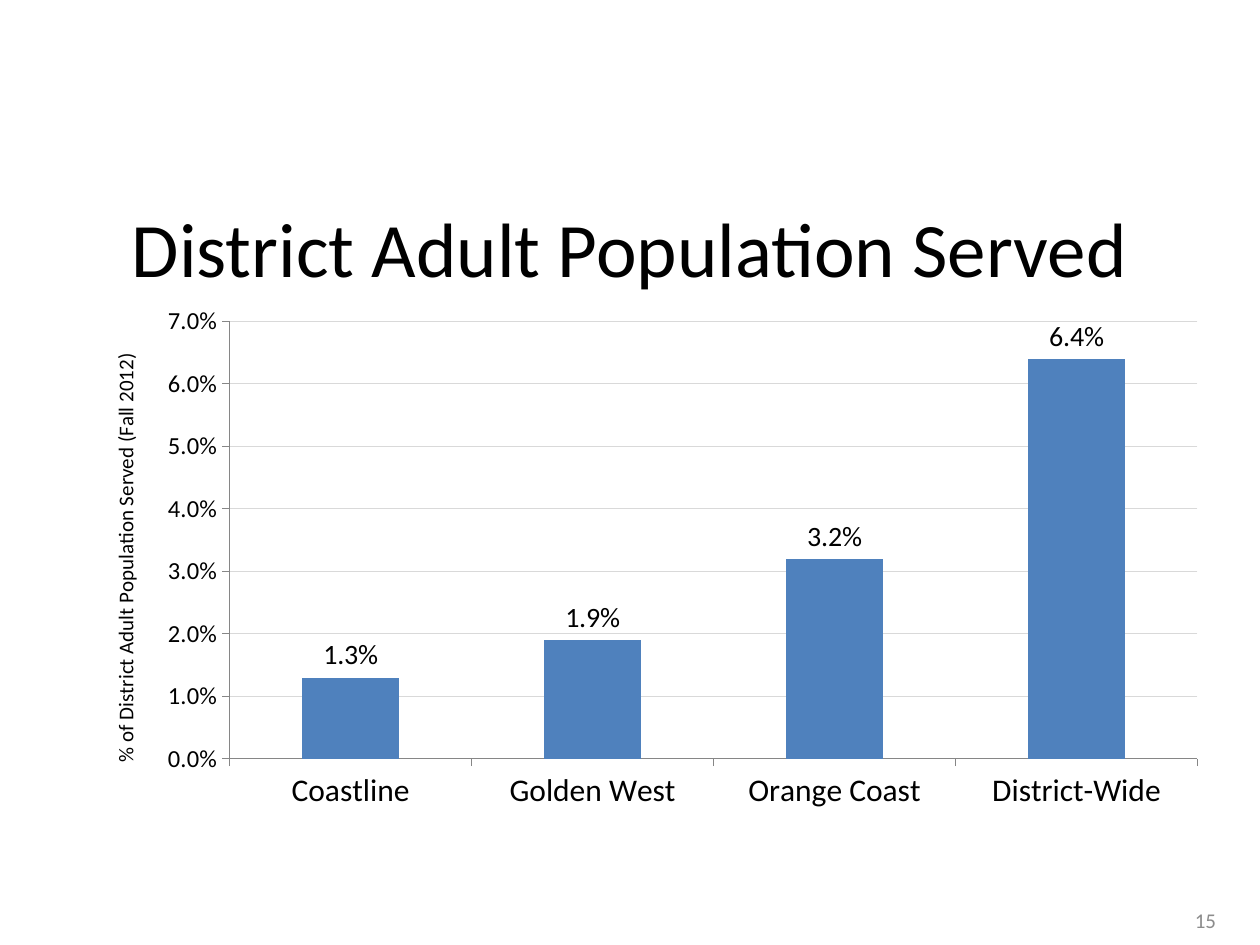
from typing import NamedTuple

from lxml import etree
from pptx import Presentation
from pptx.chart.data import CategoryChartData
from pptx.dml.color import RGBColor
from pptx.enum import chart as ch, text as tx
from pptx.oxml import ns
from pptx.util import Inches, Pt

FONT = "Calibri"
PERCENT = "0.0%"
SERVED = {
    "Coastline": 0.013,
    "Golden West": 0.019,
    "Orange Coast": 0.032,
    "District-Wide": 0.064,
}


class Label(NamedTuple):
    text: str
    box: tuple[float, float, float, float]
    size: int
    color: str
    align: tx.PP_ALIGN


LABELS = [
    Label("District Adult Population Served", (0.5, 1.33, 9, 1.25),
          44, "000000", tx.PP_ALIGN.CENTER),
    Label("15", (7.42, 7.1, 2.33, 0.4), 12, "8C8C8C", tx.PP_ALIGN.RIGHT),
]


def rgb(code: str) -> RGBColor:
    return RGBColor.from_string(code)


def style(font, size: int, color: str = "000000") -> None:
    font.name = FONT
    font.size = Pt(size)
    font.bold = False
    font.color.rgb = rgb(color)


def rule(line, color: str) -> None:
    line.color.rgb = rgb(color)
    line.width = Pt(0.75)


def add_label(slide, label: Label) -> None:
    box = slide.shapes.add_textbox(*map(Inches, label.box))
    frame = box.text_frame
    frame.word_wrap = True
    frame.vertical_anchor = tx.MSO_ANCHOR.MIDDLE
    par = frame.paragraphs[0]
    par.text = label.text
    par.alignment = label.align
    style(par.font, label.size, label.color)


def set_plot(chart, **spot: float) -> None:
    """Fix the inner plot area as fractions of the chart (x, y, w, h)."""
    area = chart.plots[0]._element.getparent()
    for old in area.findall(ns.qn("c:layout")):
        area.remove(old)
    layout = etree.Element(ns.qn("c:layout"))
    area.insert(0, layout)
    manual = etree.SubElement(layout, ns.qn("c:manualLayout"))
    parts = {"layoutTarget": "inner", "xMode": "edge", "yMode": "edge", **spot}
    for name, val in parts.items():
        etree.SubElement(manual, ns.qn(f"c:{name}"), val=str(val))


def add_bars(slide) -> None:
    data = CategoryChartData(number_format=PERCENT)
    data.categories = list(SERVED)
    data.add_series("Series 1", list(SERVED.values()))
    box = map(Inches, (0.58, 2.33, 9.08, 4.25))
    chart = slide.shapes.add_chart(
        ch.XL_CHART_TYPE.COLUMN_CLUSTERED, *box, data).chart
    chart.has_legend = False
    chart.has_title = False
    style(chart.font, 18)
    set_plot(chart, x=0.137, y=0.052, w=0.846, h=0.817)

    plot = chart.plots[0]
    plot.gap_width = 150
    plot.vary_by_categories = False
    fill = plot.series[0].format.fill
    fill.solid()
    fill.fore_color.rgb = rgb("4F81BD")
    plot.has_data_labels = True
    tags = plot.data_labels
    tags.show_value = True
    tags.position = ch.XL_LABEL_POSITION.OUTSIDE_END
    tags.number_format = PERCENT
    tags.number_format_is_linked = False
    style(tags.font, 16)

    cats, vals = chart.category_axis, chart.value_axis
    for axis, size in ((cats, 18), (vals, 14)):
        axis.major_tick_mark = ch.XL_TICK_MARK.OUTSIDE
        rule(axis.format.line, "868686")
        style(axis.tick_labels.font, size)
    vals.minimum_scale, vals.maximum_scale, vals.major_unit = 0, 0.07, 0.01
    vals.tick_labels.number_format = PERCENT
    vals.tick_labels.number_format_is_linked = False
    rule(vals.major_gridlines.format.line, "D9D9D9")
    par = vals.axis_title.text_frame.paragraphs[0]
    par.text = "% of District Adult Population Served (Fall 2012)"
    style(par.font, 12)


def main() -> None:
    deck = Presentation()
    deck.slide_width, deck.slide_height = Inches(10), Inches(7.5)
    slide = deck.slides.add_slide(deck.slide_layouts[6])
    for label in LABELS:
        add_label(slide, label)
    add_bars(slide)
    deck.save("out.pptx")


if __name__ == "__main__":
    main()
